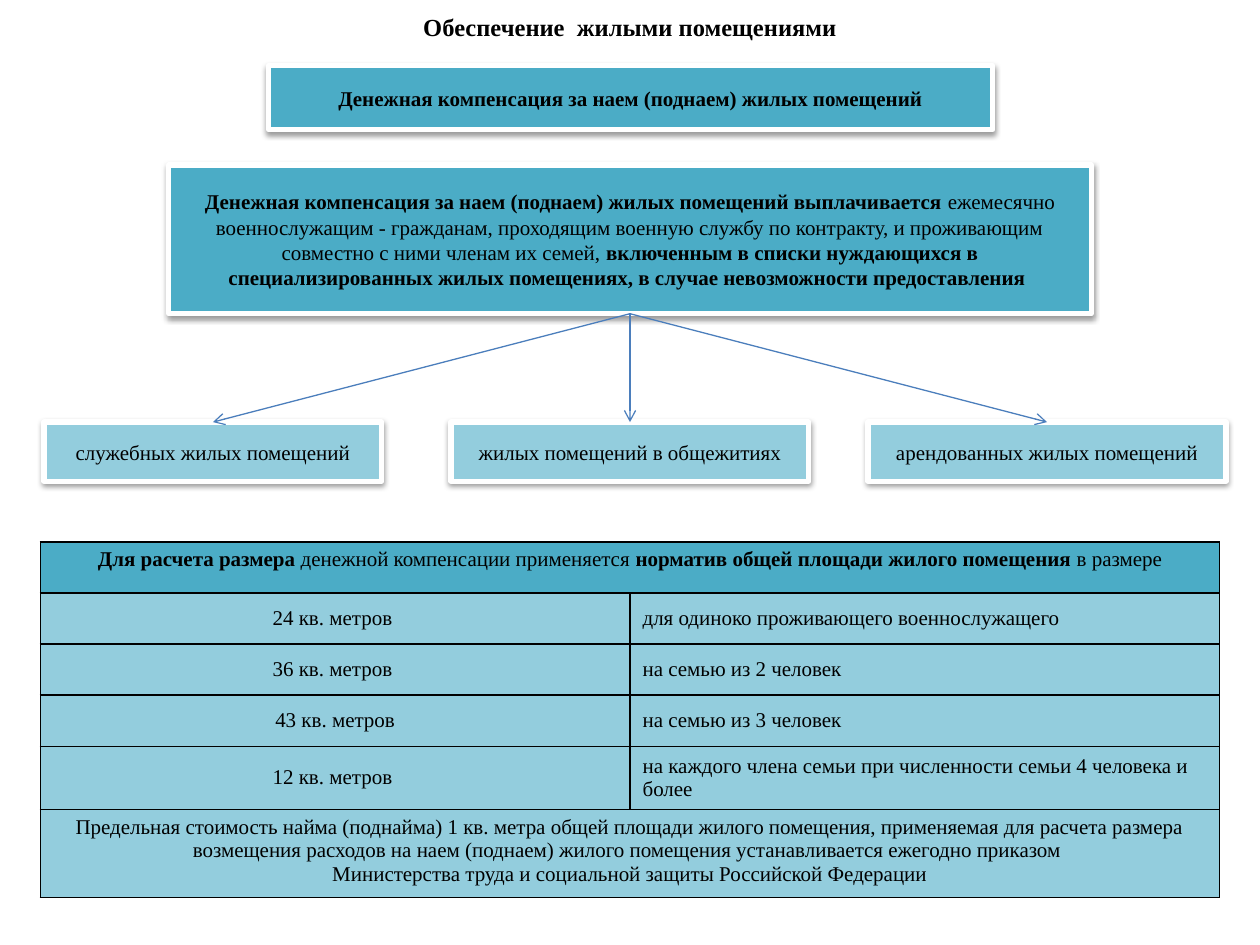
from dataclasses import dataclass
from pptx import Presentation
from pptx.dml.color import RGBColor
from pptx.enum.shapes import MSO_CONNECTOR, MSO_SHAPE
from pptx.enum.text import MSO_ANCHOR, PP_ALIGN
from pptx.oxml import parse_xml
from pptx.oxml.ns import nsdecls
from pptx.util import Inches, Pt


@dataclass(frozen=True)
class Theme:
    font: str = "Times New Roman"
    title_size: int = 14
    body_size: int = 12
    ink: str = "000000"
    strong: str = "4BACC6"
    soft: str = "93CDDD"
    edge: str = "FFFFFF"
    arrow: str = "4B7EBC"


theme = Theme()
deck = Presentation()
deck.slide_width, deck.slide_height = Inches(10), Inches(7.5)
page = deck.slides.add_slide(deck.slide_layouts[6])
column, row = deck.slide_width / 100, deck.slide_height / 75


def place(left, top, width, height):
    return int(left * column), int(top * row), int(width * column), int(height * row)


def write(frame, paragraphs, align=PP_ALIGN.CENTER, size=theme.body_size):
    for index, spans in enumerate(paragraphs):
        para = frame.paragraphs[0] if index == 0 else frame.add_paragraph()
        para.alignment = align
        para.font.name = theme.font
        para.font.size = Pt(size)
        para.font.color.rgb = RGBColor.from_string(theme.ink)
        for text, bold in spans:
            span = para.add_run()
            span.text = text
            span.font.bold = bold


title = page.shapes.add_textbox(*place(32.4, 0.5, 35.2, 3.4))
title.text_frame.word_wrap = False
write(title.text_frame, [[("Обеспечение  жилыми помещениями", True)]], size=theme.title_size)

panels = [
    ((21.3, 5.2, 57.5, 5.1), theme.strong, [("Денежная компенсация за наем (поднаем) жилых помещений", True)]),
    ((13.4, 13.1, 73.2, 11.8), theme.strong, [
        ("Денежная компенсация за наем (поднаем) жилых помещений выплачивается", True),
        (" ежемесячно военнослужащим - гражданам, проходящим военную службу по контракту, "
         "и проживающим совместно с ними членам их семей, ", False),
        ("включенным в списки нуждающихся в специализированных жилых помещениях, "
         "в случае невозможности предоставления ", True),
    ]),
    ((3.5, 33.5, 26.8, 4.7), theme.soft, [("служебных жилых помещений", False)]),
    ((35.8, 33.5, 28.4, 4.7), theme.soft, [("жилых помещений в общежитиях", False)]),
    ((68.9, 33.5, 28.4, 4.7), theme.soft, [("арендованных жилых помещений", False)]),
]
for area, color, spans in panels:
    box = page.shapes.add_shape(MSO_SHAPE.RECTANGLE, *place(*area))
    box.fill.solid()
    box.fill.fore_color.rgb = RGBColor.from_string(color)
    box.line.color.rgb = RGBColor.from_string(theme.edge)
    box.line.width = Pt(3)
    box.shadow.inherit = False
    box._element.spPr.find("{*}effectLst").append(parse_xml(
        f'<a:outerShdw {nsdecls("a")} blurRad="{Pt(3.1)}" dist="{Pt(1.6)}" dir="5400000" rotWithShape="0">'
        f'<a:srgbClr val="{theme.ink}"><a:alpha val="38000"/></a:srgbClr></a:outerShdw>'))
    box.text_frame.word_wrap = True
    box.text_frame.vertical_anchor = MSO_ANCHOR.MIDDLE
    write(box.text_frame, [spans])

norms = [
    ("24 кв. метров ", "для одиноко проживающего военнослужащего"),
    ("36 кв. метров ", "на семью из 2 человек"),
    ("43 кв. метров", "на семью из 3 человек"),
    ("12 кв. метров ", "на каждого члена семьи при численности семьи 4 человека и более"),
]
heading = [
    ("Для расчета размера", True),
    (" денежной компенсации применяется ", False),
    ("норматив общей площади жилого помещения", True),
    (" в размере", False),
]
footing = [
    [("Предельная стоимость найма (поднайма) 1 кв. метра общей площади жилого помещения, "
      "применяемая для расчета размера возмещения расходов на наем (поднаем) жилого помещения "
      "устанавливается ежегодно приказом ", False)],
    [("Министерства труда и социальной защиты Российской Федерации", False)],
]
last = len(norms) + 1
row_heights = [4.06] * len(norms) + [5, 7]
table = page.shapes.add_table(last + 1, 2, *place(3.2, 43, 93.6, sum(row_heights))).table
table.first_row = table.horz_banding = False
for table_row, height in zip(table.rows, row_heights):
    table_row.height = int(height * row)
for index in (0, last):
    table.cell(index, 0).merge(table.cell(index, 1))
write(table.cell(0, 0).text_frame, [heading])
write(table.cell(last, 0).text_frame, footing)
for index, (area_norm, household) in enumerate(norms, 1):
    write(table.cell(index, 0).text_frame, [[(area_norm, False)]])
    write(table.cell(index, 1).text_frame, [[(household, False)]], PP_ALIGN.LEFT)
    for cell in table.rows[index].cells:
        cell.vertical_anchor = MSO_ANCHOR.MIDDLE
for index, table_row in enumerate(table.rows):
    for cell in table_row.cells:
        properties = cell._tc.get_or_add_tcPr()
        for side in ("lnL", "lnR", "lnT", "lnB"):
            properties.append(parse_xml(
                f'<a:{side} {nsdecls("a")} w="{Pt(1)}"><a:solidFill>'
                f'<a:srgbClr val="{theme.ink}"/></a:solidFill></a:{side}>'))
        cell.fill.solid()
        cell.fill.fore_color.rgb = RGBColor.from_string(theme.strong if index == 0 else theme.soft)

for target in (16.9, 50, 83.1):
    arrow = page.shapes.add_connector(
        MSO_CONNECTOR.STRAIGHT, *place(50, 24.9, target, 33.5))
    arrow.line.color.rgb = RGBColor.from_string(theme.arrow)
    arrow.line.width = Pt(0.75)
    arrow.line._get_or_add_ln().append(parse_xml(f'<a:tailEnd {nsdecls("a")} type="arrow"/>'))
    arrow._element.spPr.append(parse_xml(f'<a:effectLst {nsdecls("a")}/>'))

deck.save("out.pptx")
